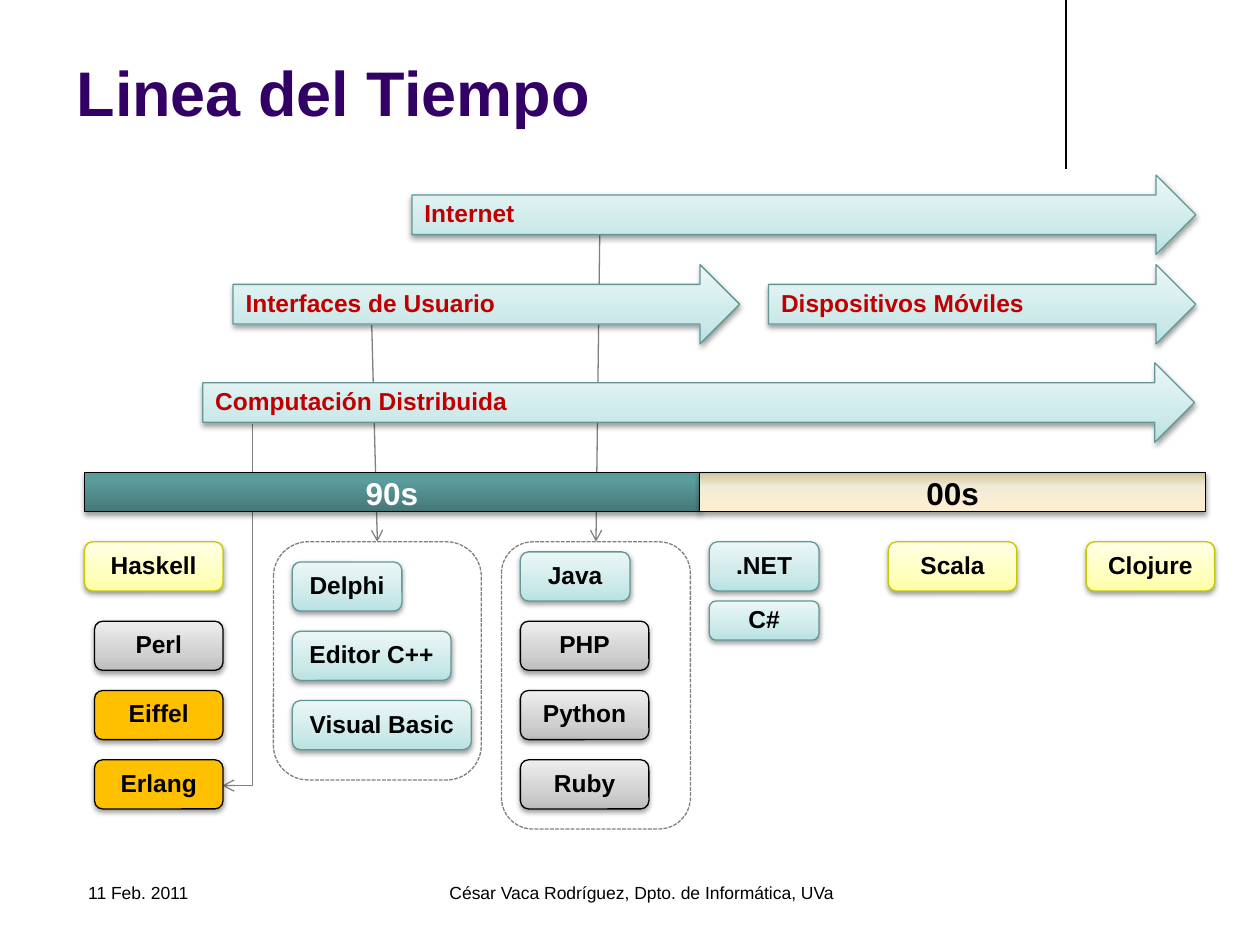
from lxml import etree
from pptx import Presentation
from pptx.dml.color import RGBColor
from pptx.enum.dml import MSO_LINE
from pptx.enum.shapes import MSO_CONNECTOR, MSO_SHAPE
from pptx.enum.text import MSO_ANCHOR, PP_ALIGN
from pptx.oxml.ns import qn
from pptx.util import Inches, Pt

LEFT, MID = PP_ALIGN.LEFT, PP_ALIGN.CENTER
TOP, CENTER = MSO_ANCHOR.TOP, MSO_ANCHOR.MIDDLE
RECT, ROUND = MSO_SHAPE.RECTANGLE, MSO_SHAPE.ROUNDED_RECTANGLE
ARROW = MSO_SHAPE.RIGHT_ARROW
STRAIGHT, ELBOW = MSO_CONNECTOR.STRAIGHT, MSO_CONNECTOR.ELBOW
DASH = MSO_LINE.SQUARE_DOT
BLACK, GRAY, RED = "000000", "808080", "C00000"

STYLES = {
    "object": ([(0, "B9E2E2"), (35, "CEEAEA"), (100, "ECF7F7")], "639797"),
    "script": ([(0, "BDBDBD"), (35, "D1D1D1"), (100, "EEEEEE")], BLACK),
    "function": ([(0, "FFFFA5"), (35, "FFFFBF"), (100, "FFFFE7")], "C8C800"),
    "other": ("FFC000", BLACK),
    "nineties": ([(0, "467878"), (80, "5B9C9C"), (100, "5B9E9E")], BLACK),
    "noughties": ([(0, "FFEFD1"), (65, "F0EBD5"), (100, "D1C39F")], BLACK),
}

TITLE = "Linea del Tiempo"
FOOTERS = [
    ("11 Feb. 2011", 0.5, 2.33, LEFT),
    ("César Vaca Rodríguez, Dpto. de Informática, UVa", 3.03, 4.02, MID),
]
DECADES = [
    ("90s", "nineties", 0.67, 4.88, "FFFFFF"),
    ("00s", "noughties", 5.55, 4.02, BLACK),
]
TRENDS = [
    ("Internet", 3.27, 1.39, 6.22),
    ("Interfaces de Usuario", 1.85, 2.1, 4.02),
    ("Dispositivos Móviles", 6.1, 2.1, 3.39),
    ("Computación Distribuida", 1.61, 2.88, 7.87),
]
GROUPS = [
    ((2.17, 4.3, 1.65, 1.89), (2.95, 2.57)),
    ((3.98, 4.3, 1.5, 2.28), (4.76, 1.86)),
]
PITCH = 0.55
COLUMNS = [
    (0.67, 4.3, 0.39, [("Haskell", "function", 1.1)]),
    (0.75, 4.93, 0.39, [("Perl", "script", 1.02), ("Eiffel", "other", 1.02),
                        ("Erlang", "other", 1.02)]),
    (2.32, 4.46, 0.39, [("Delphi", "object", 0.87), ("Editor C++", "object", 1.26),
                        ("Visual Basic", "object", 1.42)]),
    (4.13, 4.38, 0.39, [("Java", "object", 0.87), ("PHP", "script", 1.02),
                        ("Python", "script", 1.02), ("Ruby", "script", 1.02)]),
    (5.63, 4.3, 0.39, [(".NET", "object", 0.87)]),
    (5.63, 4.77, 0.31, [("C#", "object", 0.87)]),
    (7.05, 4.3, 0.39, [("Scala", "function", 1.02)]),
    (8.62, 4.3, 0.39, [("Clojure", "function", 1.02)]),
]


def paint(color):
    return RGBColor.from_string(color)


def write(shape, text, size=14, color=BLACK, bold=True, align=MID,
          anchor=CENTER, space=0.9, inset=0.1):
    frame = shape.text_frame
    frame.word_wrap = True
    frame.vertical_anchor = anchor
    frame.margin_left = Inches(inset)
    para = frame.paragraphs[0]
    para.alignment = align
    para.line_spacing = space
    run = para.add_run()
    run.text = text
    font = run.font
    font.name, font.size, font.bold = "Arial", Pt(size), bold
    font.color.rgb = paint(color)


def label(slide, text, box, **form):
    write(slide.shapes.add_textbox(*map(Inches, box)), text, space=1.0, **form)


def blend(shape, stops):
    shape.fill.gradient()
    shape.fill.gradient_angle = 90
    ramp = shape.element.spPr.find(".//" + qn("a:gsLst"))
    for old in list(ramp):
        ramp.remove(old)
    for place, color in stops:
        stop = etree.SubElement(ramp, qn("a:gs"), pos=str(place * 1000))
        etree.SubElement(stop, qn("a:srgbClr"), val=color)


def shade(shape):
    effects = shape.element.spPr.find(qn("a:effectLst"))
    drop = etree.SubElement(effects, qn("a:outerShdw"), blurRad=str(Pt(3.1)),
                            dist=str(Pt(1.6)), dir="5400000", rotWithShape="0")
    tint = etree.SubElement(drop, qn("a:srgbClr"), val=BLACK)
    etree.SubElement(tint, qn("a:alpha"), val="38000")


def block(slide, kind, box, style, text, **form):
    shape = slide.shapes.add_shape(kind, *map(Inches, box))
    shape.shadow.inherit = False
    fill, edge = STYLES[style]
    if isinstance(fill, str):
        shape.fill.solid()
        shape.fill.fore_color.rgb = paint(fill)
    else:
        blend(shape, fill)
    shape.line.color.rgb = paint(edge)
    shape.line.width = Pt(0.75)
    shade(shape)
    write(shape, text, **form)


def frame(slide, box):
    shape = slide.shapes.add_shape(ROUND, *map(Inches, box))
    shape.shadow.inherit = False
    shape.fill.background()
    shape.line.color.rgb = paint(GRAY)
    shape.line.width = Pt(0.75)
    shape.line.dash_style = DASH
    return shape


def link(slide, ends, color=GRAY, kind=STRAIGHT, head=True):
    wire = slide.shapes.add_connector(kind, *map(Inches, ends))
    wire.line.color.rgb = paint(color)
    wire.line.width = Pt(0.75)
    if head:
        etree.SubElement(wire.line._get_or_add_ln(), qn("a:tailEnd"), type="arrow")
    etree.SubElement(wire._element.spPr, qn("a:effectLst"))
    return wire


def main():
    deck = Presentation()
    deck.slide_width, deck.slide_height = Inches(10), Inches(7.5)
    slide = deck.slides.add_slide(deck.slide_layouts[6])

    link(slide, (8.46, 0, 8.46, 1.34), color=BLACK, head=False)
    for box, start in GROUPS:
        group = frame(slide, box)
        wire = link(slide, (*start, box[0] + box[2] / 2, box[1]))
        wire.end_connect(group, 0)
    bend = link(slide, (0.45, 4.68, 3.32, 4.92), kind=ELBOW)
    shell = bend._element.spPr
    shell.find(qn("a:xfrm")).set("rot", "5400000")
    shell.find(qn("a:prstGeom")).set("prst", "bentConnector2")

    label(slide, TITLE, (0.51, 0.29, 7.8, 0.87), size=36, color="330066", align=LEFT)
    for text, left, width, align in FOOTERS:
        label(slide, text, (left, 6.83, width, 0.5), size=10, bold=False,
              align=align, inset=0.2)

    for text, style, left, width, color in DECADES:
        block(slide, RECT, (left, 3.75, width, 0.31), style, text,
              size=18, color=color, anchor=TOP)
    for text, left, top, width in TRENDS:
        block(slide, ARROW, (left, top, width, 0.63), "object", text,
              color=RED, align=LEFT)
    for left, top, height, items in COLUMNS:
        for row, (text, style, width) in enumerate(items):
            block(slide, ROUND, (left, top + row * PITCH, width, height), style, text)

    deck.save("out.pptx")


if __name__ == "__main__":
    main()
